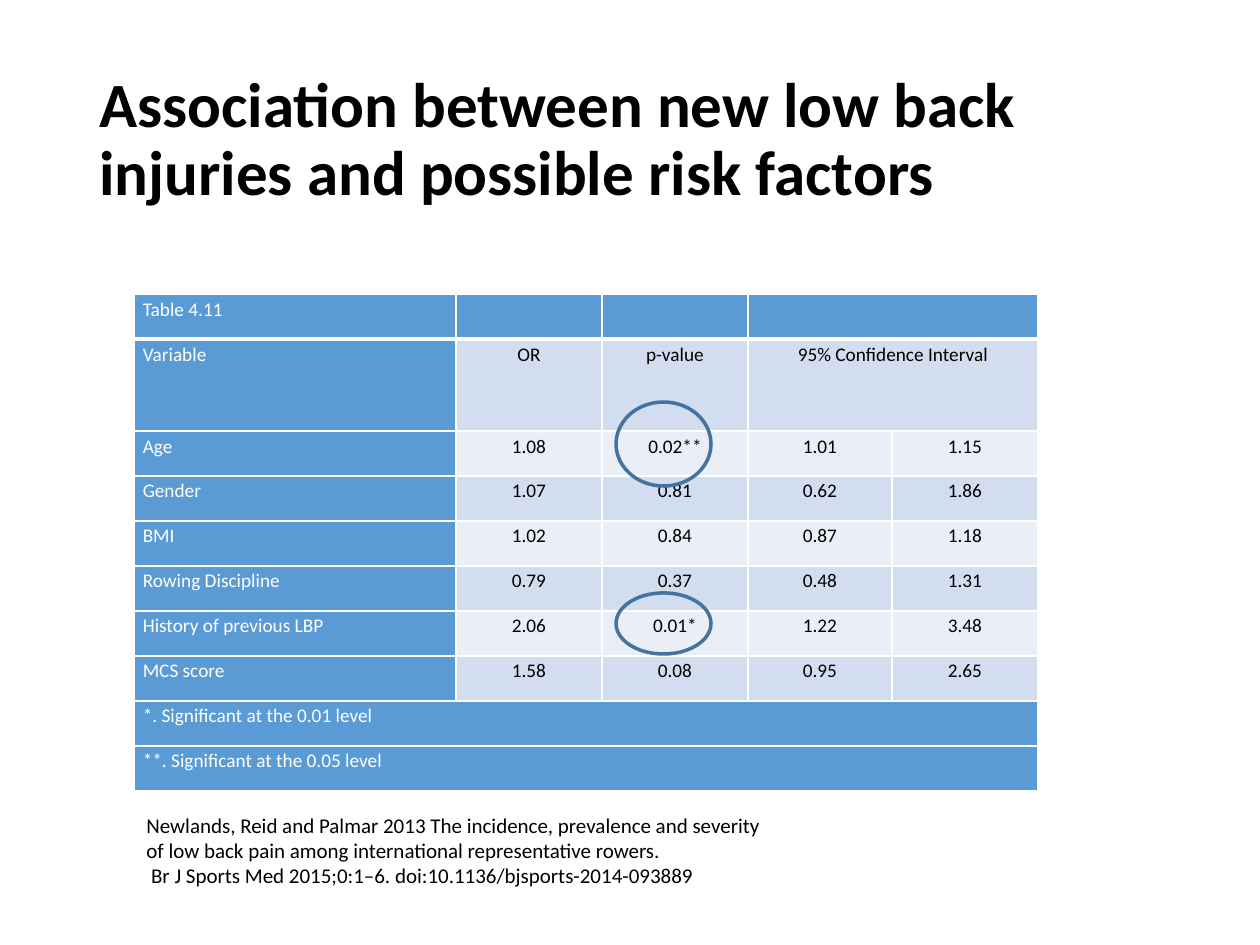
import pptx
import pptx.dml.color
import pptx.enum.shapes
import pptx.enum.text
import pptx.oxml.ns
import pptx.util
from lxml import etree

PX_PER_INCH = 126
FONT = "Calibri"
BLACK, WHITE = "000000", "FFFFFF"
BLUE, BAND_DARK, BAND_LIGHT = "5B9BD5", "D2DEEF", "EAEFF7"
RING = "43739E"
LEFT = pptx.enum.text.PP_ALIGN.LEFT
CENTER = pptx.enum.text.PP_ALIGN.CENTER

ROWS = [
    ["Table 4.11", "", "", "", ""],
    ["Variable", "OR", "p-value", "95% Confidence Interval", ""],
    ["Age", "1.08", "0.02**", "1.01", "1.15"],
    ["Gender", "1.07", "0.81", "0.62", "1.86"],
    ["BMI", "1.02", "0.84", "0.87", "1.18"],
    ["Rowing Discipline", "0.79", "0.37", "0.48", "1.31"],
    ["History of previous LBP", "2.06", "0.01*", "1.22", "3.48"],
    ["MCS score", "1.58", "0.08", "0.95", "2.65"],
    ["*. Significant at the 0.01 level", "", "", "", ""],
    ["**. Significant at the 0.05 level", "", "", "", ""],
]
MERGES = [(0, 3, 4), (1, 3, 4), (8, 0, 4), (9, 0, 4)]  # row, first and last column
BLUE_ROWS = (0, 8, 9)
COLUMN_WIDTHS = [322, 146, 146, 144, 146]
ROW_HEIGHTS = [45, 92] + [45] * 8


def px(length):
    return pptx.util.Emu(round(length * 914400 / PX_PER_INCH))


def rgb(hex_code):
    return pptx.dml.color.RGBColor.from_string(hex_code)


class SlideBuilder:
    """Holds the text style and the slide being filled."""

    def __init__(self, slide, font=FONT):
        self.slide = slide
        self.font = font

    def style(self, paragraph, size, color, bold=False, align=LEFT, spacing=1.0):
        paragraph.alignment = align
        paragraph.line_spacing = spacing
        paragraph.font.name = self.font
        paragraph.font.size = pptx.util.Pt(size)
        paragraph.font.bold = bold
        paragraph.font.color.rgb = rgb(color)

    def text(self, box, lines, size, anchor, bold=False, spacing=1.0):
        frame = self.slide.shapes.add_textbox(*map(px, box)).text_frame
        frame.word_wrap = True
        frame.vertical_anchor = anchor
        frame.text = "\n".join(lines)
        for paragraph in frame.paragraphs:
            self.style(paragraph, size, BLACK, bold, spacing=spacing)

    def ring(self, box):
        oval = pptx.enum.shapes.MSO_SHAPE.OVAL
        ellipse = self.slide.shapes.add_shape(oval, *map(px, box))
        ellipse.shadow.inherit = False
        ellipse.fill.background()
        ellipse.line.color.rgb = rgb(RING)
        ellipse.line.width = pptx.util.Pt(2)

    def borders(self, cell, bottom_width):
        """Draw white lines on all four sides of a cell."""
        qn = pptx.oxml.ns.qn
        properties = cell._tc.get_or_add_tcPr()
        for side, width in (("L", 1), ("R", 1), ("T", 1), ("B", bottom_width)):
            line = etree.SubElement(properties, qn(f"a:ln{side}"),
                                    w=str(pptx.util.Pt(width)))
            fill = etree.SubElement(line, qn("a:solidFill"))
            etree.SubElement(fill, qn("a:srgbClr"), val=WHITE)

    def cell(self, cell, words, fill, color, align, bottom_width):
        cell.margin_left = cell.margin_right = pptx.util.Inches(0.07)
        cell.margin_top = cell.margin_bottom = 0
        self.borders(cell, bottom_width)
        cell.fill.solid()
        cell.fill.fore_color.rgb = rgb(fill)
        cell.text = words
        self.style(cell.text_frame.paragraphs[0], 11, color, align=align, spacing=1.15)

    def table(self, left, top):
        size = (sum(COLUMN_WIDTHS), sum(ROW_HEIGHTS))
        table = self.slide.shapes.add_table(
            len(ROWS), len(COLUMN_WIDTHS), *map(px, (left, top, *size))).table
        table.first_row = table.horz_banding = False
        for column, width in zip(table.columns, COLUMN_WIDTHS):
            column.width = px(width)
        for row, height in zip(table.rows, ROW_HEIGHTS):
            row.height = px(height)
        for r, row in enumerate(ROWS):
            band = BAND_DARK if r % 2 else BAND_LIGHT
            for c, words in enumerate(row):
                is_blue = c == 0 or r in BLUE_ROWS
                self.cell(table.cell(r, c), words,
                          fill=BLUE if is_blue else band,
                          color=WHITE if is_blue else BLACK,
                          align=CENTER if c else LEFT,
                          bottom_width=1 if r else 3)
        for r, first, last in MERGES:
            table.cell(r, first).merge(table.cell(r, last))


def main():
    deck = pptx.Presentation()
    deck.slide_width, deck.slide_height = px(1260), px(945)
    builder = SlideBuilder(deck.slides.add_slide(deck.slide_layouts[6]))
    anchors = pptx.enum.text.MSO_ANCHOR

    builder.text((87, 50, 1086, 183),
                 ["Association between new low back injuries and possible risk factors"],
                 36, anchors.MIDDLE, bold=True, spacing=0.9)
    builder.table(134, 294)
    builder.ring((616, 402, 95, 84))
    builder.ring((616, 593, 95, 61))
    builder.text((134, 806, 954, 127),
                 ["Newlands, Reid and Palmar 2013 The incidence, prevalence and severity",
                  "of low back pain among international representative rowers.",
                  " Br J Sports Med 2015;0:1–6. doi:10.1136/bjsports-2014-093889"],
                 12, anchors.TOP)
    deck.save("out.pptx")


if __name__ == "__main__":
    main()
